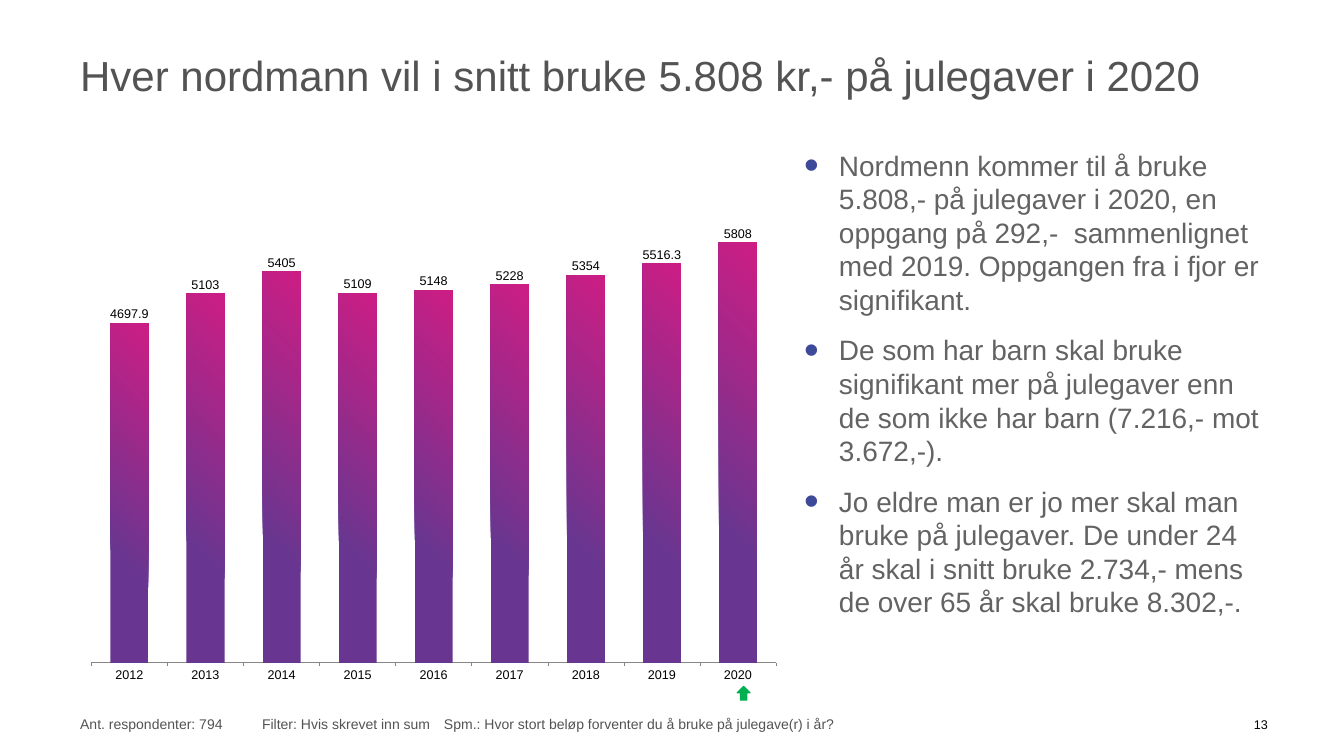
from collections import namedtuple

from lxml import etree
from pptx import Presentation
from pptx.chart.data import CategoryChartData
from pptx.dml.color import RGBColor
from pptx.enum.chart import XL_CHART_TYPE, XL_LABEL_POSITION, XL_TICK_LABEL_POSITION, XL_TICK_MARK
from pptx.enum.shapes import MSO_SHAPE
from pptx.enum.text import MSO_ANCHOR, MSO_AUTO_SIZE, PP_ALIGN
from pptx.oxml import parse_xml
from pptx.oxml.ns import nsdecls, qn
from pptx.util import Inches, Pt

FONT = "Arial"
DARK_GREY = RGBColor(0x53, 0x53, 0x53)
BODY_GREY = RGBColor(0x62, 0x63, 0x62)
AXIS_GREY = RGBColor(0x86, 0x86, 0x86)
BLACK = RGBColor(0, 0, 0)
BLUE = RGBColor(0x3D, 0x4A, 0x9A)
GREEN = RGBColor(0x00, 0xB0, 0x50)
PINK = RGBColor(0xCD, 0x1D, 0x84)
PURPLE = RGBColor(0x68, 0x36, 0x90)

WIDTH, HEIGHT = Inches(26.67), Inches(15)
COL, ROW = WIDTH / 100, HEIGHT / 100
Box = namedtuple("Box", "x y w h")

LEFT, FULL = 5.74, 88.71
BODY_TOP, BODY_HEIGHT = 19.27, 72
TITLE_BOX = Box(LEFT, 3.13, FULL, 13.6)
CHART_BOX = Box(LEFT, BODY_TOP, 53.06, BODY_HEIGHT)
BULLET_BOX = Box(59.47, BODY_TOP, 35.06, BODY_HEIGHT)
FOOTER_BOX = Box(LEFT, 92.87, FULL, 5.8)
NUMBER_BOX = Box(93.03, 94.4, 1.57, 2.8)

SPENDING = {
    "2012": 4697.9, "2013": 5103, "2014": 5405, "2015": 5109, "2016": 5148,
    "2017": 5228, "2018": 5354, "2019": 5516.3, "2020": 5808,
}
FINDINGS = [
    "Nordmenn kommer til å bruke 5.808,- på julegaver i 2020, en oppgang på 292,-  "
    "sammenlignet med 2019. Oppgangen fra i fjor er signifikant.",
    "De som har barn skal bruke signifikant mer på julegaver enn de som ikke har barn "
    "(7.216,- mot 3.672,-).",
    "Jo eldre man er jo mer skal man bruke på julegaver. De under 24 år skal i snitt "
    "bruke 2.734,- mens de over 65 år skal bruke 8.302,-.",
]
FOOTER = [
    "Ant. respondenter: 794",
    "Filter: Hvis skrevet inn sum",
    "Spm.: Hvor stort beløp forventer du å bruke på julegave(r) i år?",
]


def emu(box):
    return [int(n) for n in (box.x * COL, box.y * ROW, box.w * COL, box.h * ROW)]


def style(font, size, color):
    font.name, font.size = FONT, Pt(size)
    font.color.rgb = color


def set_frame(tf, inset, anchor, wrap=True):
    tf.margin_left = tf.margin_right = tf.margin_top = tf.margin_bottom = Inches(inset)
    tf.vertical_anchor = anchor
    tf.word_wrap = wrap
    tf.auto_size = MSO_AUTO_SIZE.NONE


def add_title(s, box):
    sp = s.shapes.title
    sp.left, sp.top, sp.width, sp.height = emu(box)
    tf = sp.text_frame
    tf.text = "Hver nordmann vil i snitt bruke 5.808 kr,- på julegaver i 2020"
    set_frame(tf, 0.06, MSO_ANCHOR.MIDDLE)
    p = tf.paragraphs[0]
    p.alignment = PP_ALIGN.LEFT
    style(p.runs[0].font, 60, DARK_GREY)


def set_bar_gradient(series):
    stops = [(0, PINK), (70, PURPLE), (100, PURPLE)]
    stop_xml = "".join(
        f'<a:gs pos="{pos * 1000}"><a:srgbClr val="{color}"/></a:gs>' for pos, color in stops
    )
    series.format.fill.solid()
    sp_pr = series.format.fill._xPr
    sp_pr.replace(sp_pr.find(qn("a:solidFill")), parse_xml(
        f'<a:gradFill {nsdecls("a")} rotWithShape="1"><a:gsLst>{stop_xml}</a:gsLst>'
        '<a:path path="circle"><a:fillToRect l="100000" b="100000"/></a:path></a:gradFill>'
    ))


def set_plot_area(chart, x, y, w, h):
    plot_area = chart._chartSpace.chart.plotArea
    for old in plot_area.findall(qn("c:layout")):
        plot_area.remove(old)
    plot_area.insert(0, parse_xml(
        f'<c:layout {nsdecls("c")}><c:manualLayout><c:layoutTarget val="inner"/>'
        '<c:xMode val="edge"/><c:yMode val="edge"/>'
        f'<c:x val="{x}"/><c:y val="{y}"/><c:w val="{w}"/><c:h val="{h}"/>'
        '</c:manualLayout></c:layout>'
    ))


def add_spending_chart(s, box):
    data = CategoryChartData()
    data.categories = list(SPENDING)
    data.add_series("Series 1", list(SPENDING.values()))
    chart = s.shapes.add_chart(XL_CHART_TYPE.COLUMN_CLUSTERED, *emu(box), data).chart
    chart.has_legend = chart.has_title = False
    style(chart.font, 18, BLACK)
    set_plot_area(chart, 0.02, 0.02, 0.96, 0.93)

    years, amounts = chart.category_axis, chart.value_axis
    years.major_tick_mark = XL_TICK_MARK.OUTSIDE
    years.tick_label_position = XL_TICK_LABEL_POSITION.LOW
    years.format.line.color.rgb = AXIS_GREY
    amounts.minimum_scale, amounts.maximum_scale = 0, 7000
    amounts.has_major_gridlines = False
    amounts.visible = False

    plot = chart.plots[0]
    plot.gap_width = 100
    plot.vary_by_categories = False
    set_bar_gradient(plot.series[0])
    plot.has_data_labels = True
    labels = plot.data_labels
    labels.show_value = True
    labels.number_format, labels.number_format_is_linked = "General", False
    labels.position = XL_LABEL_POSITION.OUTSIDE_END
    style(labels.font, 18, BLACK)

    arrow_box = Box(box.x + 49.12, box.y + 71.53, 0.94, 1.8)
    arrow = s.shapes.add_shape(MSO_SHAPE.UP_ARROW, *emu(arrow_box))
    arrow.shadow.inherit = False
    arrow.fill.solid()
    arrow.fill.fore_color.rgb = GREEN
    arrow.line.color.rgb = GREEN
    arrow.line.width = Pt(2)


def set_bullet(p, indent):
    p_pr = p._p.get_or_add_pPr()
    p_pr.set("marL", str(indent))
    p_pr.set("indent", str(-indent))
    color = etree.SubElement(p_pr, qn("a:buClr"))
    etree.SubElement(color, qn("a:srgbClr"), val=str(BLUE))
    etree.SubElement(p_pr, qn("a:buSzPct"), val="150000")
    etree.SubElement(p_pr, qn("a:buFont"), typeface=FONT)
    etree.SubElement(p_pr, qn("a:buChar"), char="•")


def add_findings(s, box):
    tf = s.shapes.add_textbox(*emu(box)).text_frame
    tf.word_wrap = True
    tf.text = "\n".join(FINDINGS)
    for i, p in enumerate(tf.paragraphs):
        set_bullet(p, Inches(0.69))
        p.space_before = Pt(18 if i else 0)
        p.space_after = Pt(6)
        style(p.runs[0].font, 40, BODY_GREY)


def add_footer(s, box):
    tf = s.shapes.add_textbox(*emu(box)).text_frame
    set_frame(tf, 0.06, MSO_ANCHOR.MIDDLE)
    tf.text = "\t".join(FOOTER)
    p = tf.paragraphs[0]
    tabs = etree.SubElement(p._p.get_or_add_pPr(), qn("a:tabLst"))
    for i in range(1, len(FOOTER)):
        etree.SubElement(tabs, qn("a:tab"), pos=str(i * Inches(3.61)), algn="l")
    for r in p.runs:
        style(r.font, 20, DARK_GREY)


def add_page_number(s, box):
    tf = s.shapes.add_textbox(*emu(box)).text_frame
    set_frame(tf, 0.06, MSO_ANCHOR.TOP, wrap=False)
    tf.text = "13"
    p = tf.paragraphs[0]
    p.alignment = PP_ALIGN.CENTER
    style(p.runs[0].font, 18, BLACK)


def main():
    prs = Presentation()
    prs.slide_width, prs.slide_height = WIDTH, HEIGHT
    s = prs.slides.add_slide(prs.slide_layouts.get_by_name("Title Only"))
    add_title(s, TITLE_BOX)
    add_page_number(s, NUMBER_BOX)
    add_findings(s, BULLET_BOX)
    add_spending_chart(s, CHART_BOX)
    add_footer(s, FOOTER_BOX)
    prs.save("out.pptx")


if __name__ == "__main__":
    main()
